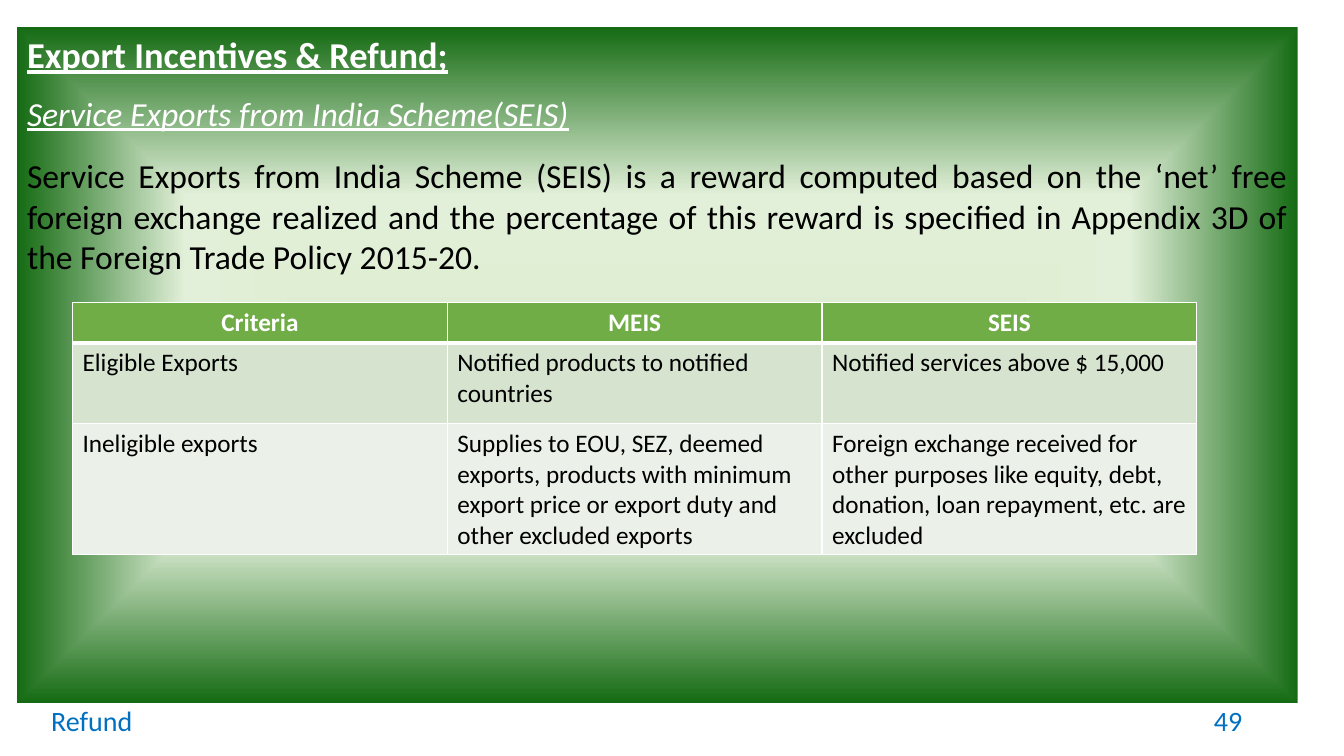
from lxml import etree
from pptx import Presentation
from pptx.dml.color import RGBColor
from pptx.enum.shapes import MSO_SHAPE
from pptx.enum.text import MSO_ANCHOR, PP_ALIGN
from pptx.oxml import parse_xml
from pptx.oxml.ns import nsdecls, qn
from pptx.util import Inches, Pt

RECTANGLE = MSO_SHAPE.RECTANGLE
TOP, MIDDLE = MSO_ANCHOR.TOP, MSO_ANCHOR.MIDDLE
LEFT, CENTER, RIGHT, JUSTIFY = PP_ALIGN.LEFT, PP_ALIGN.CENTER, PP_ALIGN.RIGHT, PP_ALIGN.JUSTIFY

COLORS = {
    "white": "FFFFFF",
    "black": "000000",
    "footer": "0070C0",
    "header": "70AD47",
    "band_dark": "D5E3CF",
    "band_light": "EBF1E9",
    "glow_center": "DDEBCF",
    "glow_middle": "E2F0D9",
    "glow_edge": "156B13",
}
FONT = "Calibri"

CRITERIA = [
    ["Criteria", "MEIS", "SEIS"],
    ["Eligible Exports", "Notified products to notified countries", "Notified services above $ 15,000"],
    [
        "Ineligible exports",
        "Supplies to EOU, SEZ, deemed exports, products with minimum export price "
        "or export duty and other excluded exports",
        "Foreign exchange received for other purposes like equity, debt, donation, "
        "loan repayment, etc. are excluded",
    ],
]


def write(paragraph, text, size=18, color="black", bold=False, italic=False,
          underline=False, align=LEFT, before=0, after=0):
    paragraph.alignment = align
    paragraph.space_before = Pt(before)
    paragraph.space_after = Pt(after)
    run = paragraph.add_run()
    run.text = text
    font = run.font
    font.name = FONT
    font.size = Pt(size)
    font.bold = bold
    font.italic = italic
    font.underline = underline
    font.color.rgb = RGBColor.from_string(COLORS[color])


class SlideBuilder:
    def __init__(self, slide):
        self.slide = slide

    def glow_panel(self, left, top, width, height, stops):
        shape = self.slide.shapes.add_shape(
            RECTANGLE, Inches(left), Inches(top), Inches(width), Inches(height))
        shape.shadow.inherit = False
        shape.line.fill.background()
        stop_list = "".join(
            f'<a:gs pos="{percent * 1000}"><a:srgbClr val="{COLORS[color]}"/></a:gs>'
            for percent, color in stops)
        gradient = parse_xml(
            f'<a:gradFill {nsdecls("a")} rotWithShape="1"><a:gsLst>{stop_list}</a:gsLst>'
            '<a:path path="shape"><a:fillToRect l="50000" t="50000" r="50000" b="50000"/>'
            '</a:path></a:gradFill>')
        shape.element.spPr.find(qn("a:prstGeom")).addnext(gradient)
        frame = shape.text_frame
        frame.word_wrap = True
        frame.vertical_anchor = TOP
        return frame

    def label(self, text, left, top, width, height, **style):
        frame = self.slide.shapes.add_textbox(
            Inches(left), Inches(top), Inches(width), Inches(height)).text_frame
        frame.word_wrap = True
        frame.vertical_anchor = MIDDLE
        write(frame.paragraphs[0], text, **style)

    def borders(self, cell, top, bottom):
        properties = cell._tc.get_or_add_tcPr()
        for side, points in (("L", 1), ("R", 1), ("T", top), ("B", bottom)):
            line = etree.SubElement(properties, qn(f"a:ln{side}"), w=str(Pt(points)))
            fill = etree.SubElement(line, qn("a:solidFill"))
            etree.SubElement(fill, qn("a:srgbClr"), val=COLORS["white"])

    def table(self, rows, left, top, width, heights, fills):
        table = self.slide.shapes.add_table(
            len(rows), len(rows[0]), Inches(left), Inches(top),
            Inches(width), Inches(sum(heights))).table
        for row_index, (texts, height, fill) in enumerate(zip(rows, heights, fills)):
            table.rows[row_index].height = Inches(height)
            is_header = row_index == 0
            for column_index, text in enumerate(texts):
                cell = table.cell(row_index, column_index)
                self.borders(cell, 3 if row_index == 1 else 1, 3 if is_header else 1)
                cell.fill.solid()
                cell.fill.fore_color.rgb = RGBColor.from_string(COLORS[fill])
                write(cell.text_frame.paragraphs[0], text, bold=is_header,
                      color="white" if is_header else "black",
                      align=CENTER if is_header else LEFT)


def main():
    presentation = Presentation()
    presentation.slide_width = Inches(13.33)
    presentation.slide_height = Inches(7.5)
    builder = SlideBuilder(presentation.slides.add_slide(presentation.slide_layouts[6]))

    frame = builder.glow_panel(0.17, 0.27, 12.7, 6.7, [
        (0, "glow_center"), (50, "glow_middle"), (100, "glow_edge")])
    write(frame.paragraphs[0], "Export Incentives & Refund;", size=26, color="white",
          bold=True, underline=True, align=JUSTIFY, after=6)
    write(frame.add_paragraph(), "Service Exports from India Scheme(SEIS)", size=24,
          color="white", italic=True, underline=True, align=JUSTIFY, before=6, after=6)
    write(frame.add_paragraph(),
          "Service Exports from India Scheme (SEIS) is a reward computed based on the "
          "‘net’ free foreign exchange realized and the percentage of this reward is "
          "specified in Appendix 3D of the Foreign Trade Policy 2015-20.",
          size=24, align=JUSTIFY, before=10)

    builder.label("49", 9.42, 6.95, 3, 0.4, size=20, color="footer", align=RIGHT)
    builder.label("Refund", 0.41, 6.95, 1.44, 0.4, size=20, color="footer")
    builder.table(CRITERIA, 0.72, 3, 11.15, [0.4, 0.8, 1.3],
                  ["header", "band_dark", "band_light"])
    presentation.save("out.pptx")


if __name__ == "__main__":
    main()
